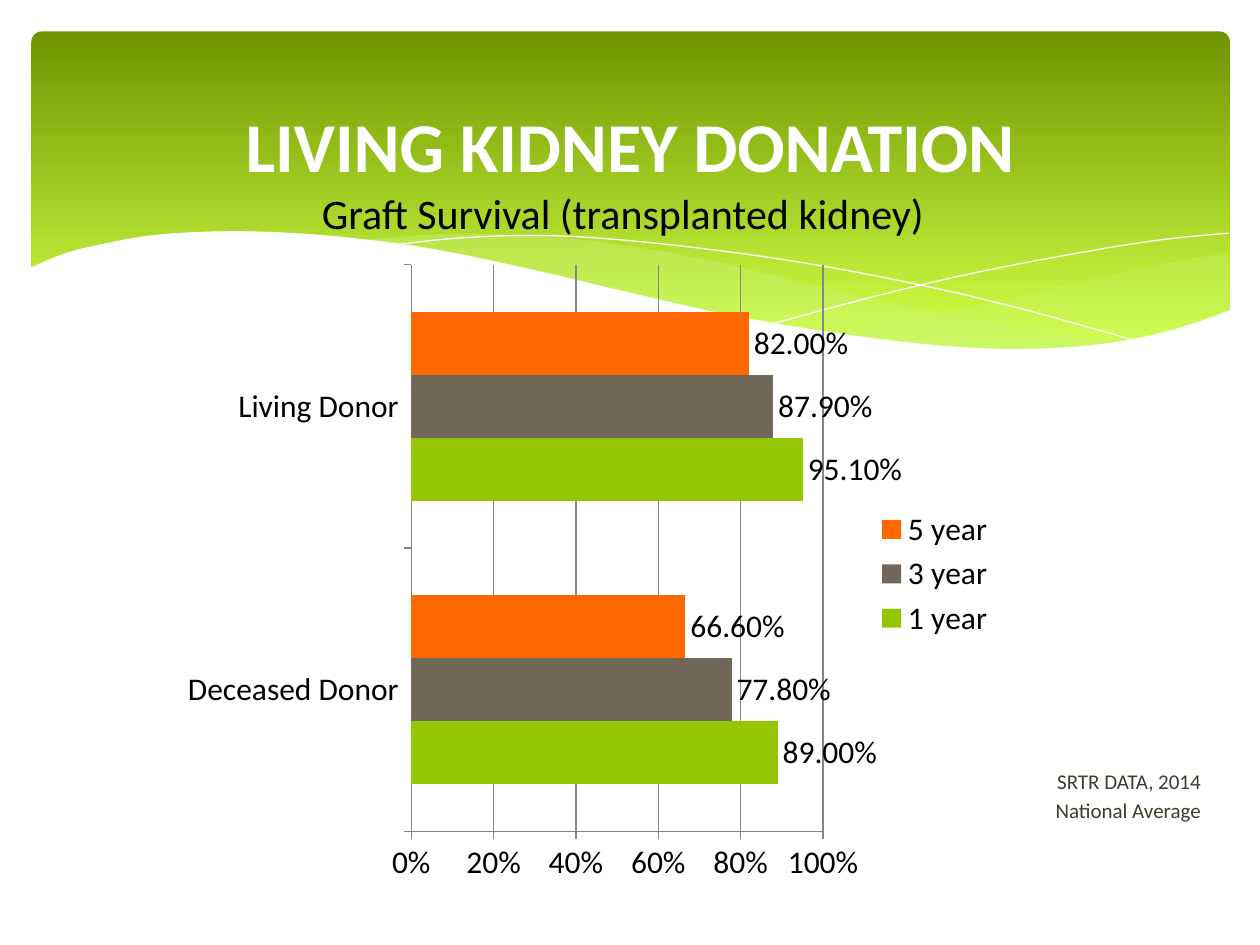
from itertools import chain

from lxml.etree import SubElement
from pptx import Presentation
from pptx.chart.data import CategoryChartData
from pptx.dml.color import RGBColor
from pptx.enum.chart import XL_CHART_TYPE, XL_LABEL_POSITION, XL_LEGEND_POSITION, XL_TICK_MARK
from pptx.enum.shapes import MSO_SHAPE
from pptx.enum.text import MSO_ANCHOR, PP_ALIGN
from pptx.oxml.ns import qn
from pptx.util import Inches, Pt

COLUMNS, ROWS = 100, 75


def color(hex_string):
    return RGBColor.from_string(hex_string)


def smooth(knots, steps=6):
    padded = [knots[0], *knots, knots[-1]]
    curve = [knots[0]]
    for a, b, c, d in zip(padded, padded[1:], padded[2:], padded[3:]):
        for step in range(1, steps + 1):
            t = step / steps
            curve.append(tuple(
                (2 * q + (r - p) * t + (2 * p - 5 * q + 4 * r - s) * t ** 2
                 + (3 * q - p - 3 * r + s) * t ** 3) / 2
                for p, q, r, s in zip(a, b, c, d)))
    return curve


class SlideBuilder:
    font = "Calibri"
    black, white, grid_gray = "000000", "FFFFFF", "868686"

    def __init__(self, deck):
        self.column = deck.slide_width / COLUMNS
        self.row = deck.slide_height / ROWS
        self.slide = deck.slides.add_slide(deck.slide_layouts[6])
        self.shapes = self.slide.shapes

    def point(self, x, y):
        return round(x * self.column), round(y * self.row)

    def box(self, left, top, width, height):
        return self.point(left, top) + self.point(width, height)

    def panel(self, area, top_color, bottom_color):
        panel = self.shapes.add_shape(MSO_SHAPE.ROUNDED_RECTANGLE, *self.box(*area))
        panel.shadow.inherit = False
        panel.adjustments[0] = 0.03
        panel.line.fill.background()
        panel.fill.gradient()
        panel.fill.gradient_angle = 270
        for stop, shade, position in zip(
                panel.fill.gradient_stops, (top_color, bottom_color), (0, 0.9)):
            stop.color.rgb = color(shade)
            stop.position = position

    def outline(self, points, closed):
        corners = [self.point(*p) for p in points]
        builder = self.shapes.build_freeform(*corners[0], scale=1.0)
        builder.add_line_segments(corners[1:], close=closed)
        outline = builder.convert_to_shape()
        outline.shadow.inherit = False
        return outline

    def wave(self, *edges, fill, opacity=100):
        wave = self.outline(list(chain.from_iterable(map(smooth, edges))), True)
        wave.line.fill.background()
        wave.fill.solid()
        wave.fill.fore_color.rgb = color(fill)
        if opacity < 100:
            shade = wave.fill._xPr.find(".//" + qn("a:srgbClr"))
            SubElement(shade, qn("a:alpha"), val=str(opacity * 1000))

    def hairline(self, knots):
        hairline = self.outline(smooth(knots), False)
        hairline.fill.background()
        hairline.line.color.rgb = color(self.white)
        hairline.line.width = Pt(0)

    def text(self, area, lines, size, shade, align=PP_ALIGN.CENTER, bold=False,
             anchor=MSO_ANCHOR.MIDDLE, gap=0):
        frame = self.shapes.add_textbox(*self.box(*area)).text_frame
        frame.word_wrap = True
        frame.vertical_anchor = anchor
        frame.text = "\n".join(lines)
        for paragraph in frame.paragraphs:
            paragraph.alignment = align
            paragraph.space_before = Pt(gap)
            paragraph.font.name = self.font
            paragraph.font.size = Pt(size)
            paragraph.font.bold = bold
            paragraph.font.color.rgb = color(shade)

    def bar_chart(self, area, categories, series, plot_area):
        data = CategoryChartData(number_format="0.00%")
        data.categories = categories
        for name, values, _ in series:
            data.add_series(name, values)
        chart = self.shapes.add_chart(
            XL_CHART_TYPE.BAR_CLUSTERED, *self.box(*area), data).chart
        chart.has_title = False
        chart.font.name = self.font
        chart.font.size = Pt(18)
        chart.font.color.rgb = color(self.black)
        chart.has_legend = True
        chart.legend.position = XL_LEGEND_POSITION.RIGHT
        chart.legend.include_in_layout = False

        plot = chart.plots[0]
        plot.gap_width = 150
        plot.overlap = 0
        plot.vary_by_categories = False
        for bars, (_, _, shade) in zip(plot.series, series):
            bars.format.fill.solid()
            bars.format.fill.fore_color.rgb = color(shade)
            labels = bars.data_labels
            labels.show_value = True
            labels.number_format = "0.00%"
            labels.number_format_is_linked = False
            labels.position = XL_LABEL_POSITION.OUTSIDE_END

        scale = chart.value_axis
        scale.minimum_scale, scale.maximum_scale, scale.major_unit = 0, 1, 0.2
        scale.tick_labels.number_format = "0%"
        scale.tick_labels.number_format_is_linked = False
        scale.has_major_gridlines = True
        chart.category_axis.has_major_gridlines = False
        for axis in (scale, chart.category_axis):
            axis.major_tick_mark = XL_TICK_MARK.OUTSIDE
        for part in (scale, chart.category_axis, scale.major_gridlines):
            part.format.line.color.rgb = color(self.grid_gray)
            part.format.line.width = Pt(0.75)
        self.place_plot(chart, plot_area)

    def place_plot(self, chart, plot_area):
        plot_element = chart._chartSpace.chart.plotArea
        layout = plot_element.find(qn("c:layout"))
        if layout is None:
            layout = SubElement(plot_element, qn("c:layout"))
            plot_element.insert(0, layout)
        manual = SubElement(layout, qn("c:manualLayout"))
        settings = [("layoutTarget", "inner"), ("xMode", "edge"), ("yMode", "edge"),
                    *zip("xywh", plot_area)]
        for tag, value in settings:
            SubElement(manual, qn("c:" + tag), val=str(value))


def main():
    deck = Presentation()
    deck.slide_width, deck.slide_height = Inches(10), Inches(7.5)
    page = SlideBuilder(deck)

    page.panel((2.5, 2.5, 95.1, 27), "6F9400", "D0FF44")
    page.wave(
        [(97.6, 20), (92.1, 21), (86.1, 22.3), (77.9, 24.2), (66.1, 26.5)],
        [(66.1, 26.5), (71.9, 27.2), (78.1, 27.7), (84.4, 27.7), (90.5, 26.9),
         (94.9, 25.7), (97.6, 24.7)],
        fill="CAF278", opacity=29)
    page.wave(
        [(89.3, 27.3), (80.7, 26), (70.6, 24), (62.9, 22.2), (55.5, 20.5),
         (47.7, 19.2), (39.9, 18.6), (34.4, 18.6), (28.6, 19.1)],
        [(28.6, 19.1), (36.2, 20.3), (44.9, 22.2), (53, 24), (61.8, 25.8),
         (69.5, 27), (77.3, 27.7), (83.8, 27.8), (89.3, 27.3)],
        fill="CAF278", opacity=40)
    page.hairline([(30.9, 19.5), (36.3, 18.9), (43.3, 18.7), (51, 19.2),
                   (60.8, 20.4), (69.5, 21.9), (79.5, 24.1), (90.7, 27.2)])
    page.hairline([(61.3, 25.7), (69.5, 23.5), (77.6, 21.6), (86.6, 19.9),
                   (92.4, 19), (97.5, 18.5)])
    page.wave(
        [(97.7, 24.6), (93, 26.2), (87.5, 27.3), (80.9, 27.7), (74.4, 27.4),
         (66.8, 26.5), (57.9, 25), (50.3, 23.3), (41.8, 21.3), (34, 19.7),
         (27.1, 18.8), (21.1, 18.4), (16.1, 18.4), (11.9, 18.7), (8.5, 19.3),
         (5.2, 20.1), (2.3, 21.3)],
        [(2.3, 32.9), (97.7, 32.9)],
        fill=page.white)

    page.text((5, 3.7, 90, 15.5), ["LIVING KIDNEY DONATION"], 40, page.white, bold=True)
    page.bar_chart(
        (13.3, 20, 66.7, 51.1), ["Deceased Donor", "Living Donor"],
        [("1 year", (0.89, 0.951), "94C600"),
         ("3 year", (0.778, 0.879), "71685A"),
         ("5 year", (0.666, 0.82), "FF6700")],
        plot_area=(0.29, 0.02, 0.49, 0.88))
    page.text((3.3, 14.2, 92.3, 5.3), ["Graft Survival (transplanted kidney)"],
              24, page.black)
    page.text((70, 60.5, 26.3, 5.5), ["SRTR DATA, 2014", "National Average"], 12,
              "3E3D2D", align=PP_ALIGN.RIGHT, anchor=MSO_ANCHOR.TOP, gap=2.4)

    deck.save("out.pptx")


if __name__ == "__main__":
    main()
